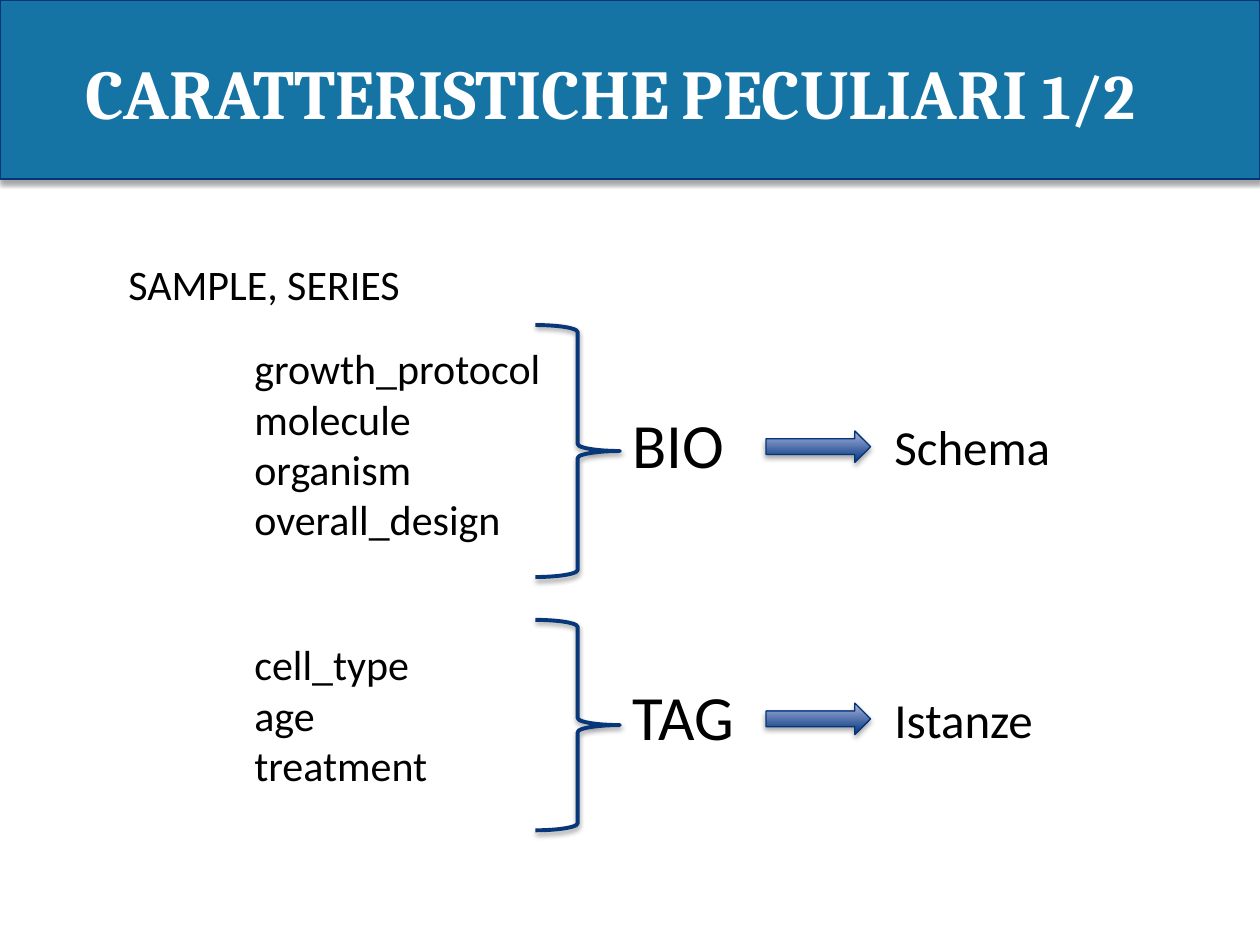
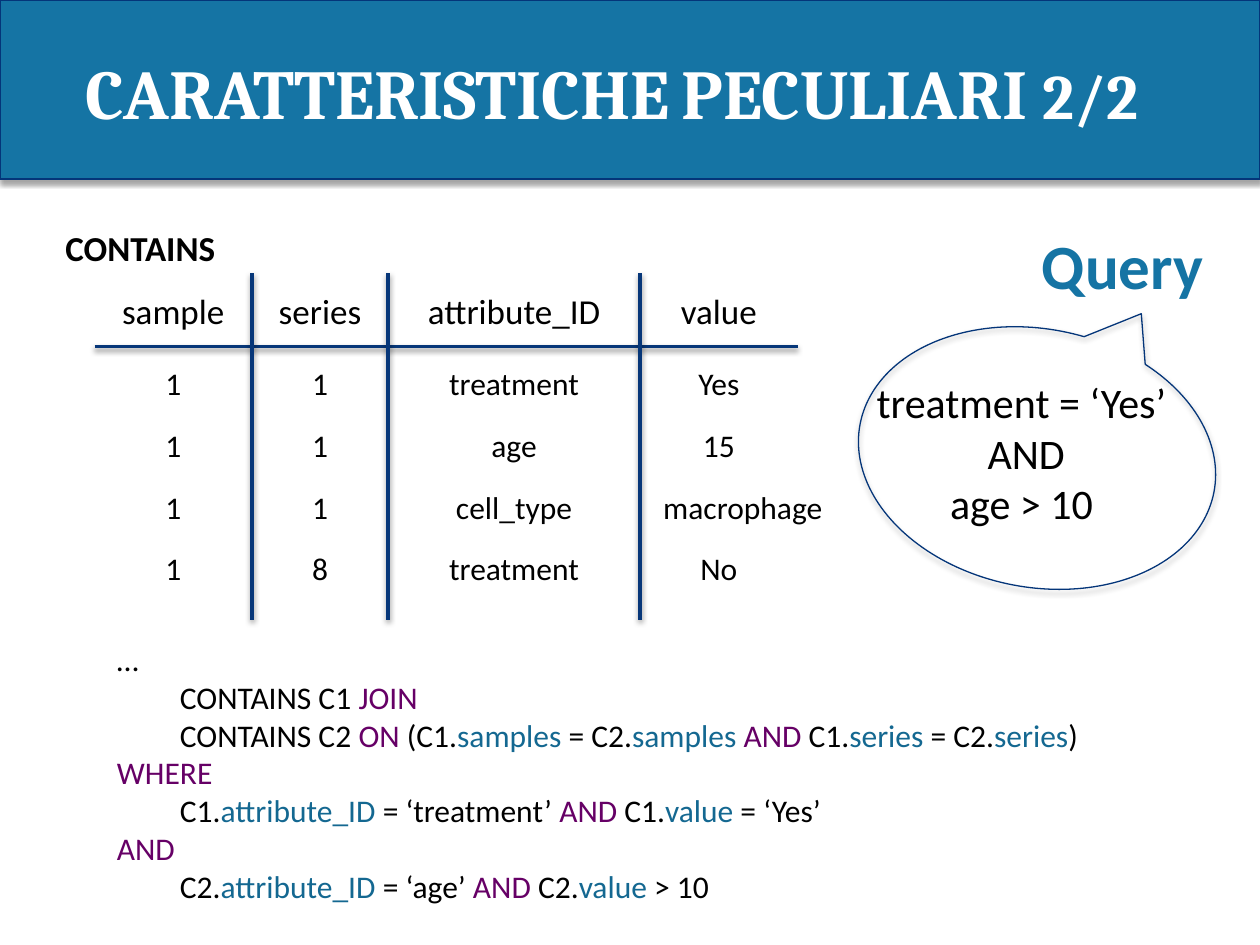
from lxml import etree
from pptx import Presentation
from pptx.dml.color import RGBColor
from pptx.enum import shapes, text
from pptx.oxml import ns
from pptx.util import Inches, Pt

BAND_BLUE = RGBColor(0x15, 0x74, 0xA4)
OUTLINE = RGBColor(0x04, 0x35, 0x79)
RULE = RGBColor(0x07, 0x37, 0x79)
ARROW_DARK = RGBColor(0x00, 0x36, 0x80)
ARROW_LIGHT = RGBColor(0xAB, 0xB3, 0xDC)
KEYWORD = RGBColor(0x66, 0x00, 0x66)
COLUMN = RGBColor(0x14, 0x68, 0x91)
SPACE_GREY = RGBColor(0xD7, 0xD7, 0xD7)
WHITE = RGBColor(0xFF, 0xFF, 0xFF)
BLACK = RGBColor(0, 0, 0)
LEFT, CENTER = text.PP_ALIGN.LEFT, text.PP_ALIGN.CENTER
NO_GRID_STYLE = "{2D5ABB26-0587-4C30-8999-92F81FD0307C}"


def write(frame, paragraphs, size, font="Calibri", color=BLACK, bold=False,
          align=LEFT, indents=None):
    """Each paragraph is a string or a list of (text, size, color) runs."""
    frame.word_wrap = True
    for index, runs in enumerate(paragraphs):
        paragraph = frame.paragraphs[0] if index == 0 else frame.add_paragraph()
        paragraph.alignment = align
        if indents and indents[index]:
            paragraph._p.get_or_add_pPr().set("marL", str(Inches(indents[index])))
        if isinstance(runs, str):
            runs = [(runs, size, color)]
        for content, run_size, run_color in runs:
            run = paragraph.add_run()
            run.text = content
            run.font.name = font
            run.font.size = Pt(run_size)
            run.font.bold = bold
            run.font.color.rgb = run_color


def outline(shape, color, width, opacity, distance):
    """Line plus a soft shadow falling straight down."""
    shape.line.color.rgb = color
    shape.line.width = Pt(width)
    properties = shape._element.spPr
    for old in properties.findall(ns.qn("a:effectLst")):
        properties.remove(old)
    effects = etree.SubElement(properties, ns.qn("a:effectLst"))
    shadow = etree.SubElement(effects, ns.qn("a:outerShdw"), blurRad=str(Pt(3.1)),
                              dist=str(Pt(distance)), dir="5400000", rotWithShape="0")
    black = etree.SubElement(shadow, ns.qn("a:srgbClr"), val="000000")
    etree.SubElement(black, ns.qn("a:alpha"), val=str(opacity * 1000))


presentation = Presentation()
presentation.slide_width = Inches(10)
presentation.slide_height = Inches(7.5)

# Title band on both slides
slides = []
for page in ("1/2", "2/2"):
    slide = presentation.slides.add_slide(presentation.slide_layouts[6])
    slides.append(slide)
    band = slide.shapes.add_shape(shapes.MSO_SHAPE.RECTANGLE, 0, 0, Inches(10), Inches(1.42))
    band.fill.solid()
    band.fill.fore_color.rgb = BAND_BLUE
    outline(band, OUTLINE, 0.75, 35, 1.8)
    title = slide.shapes.add_textbox(Inches(0.58), Inches(-0.08), Inches(9), Inches(1.61))
    title.text_frame.vertical_anchor = text.MSO_ANCHOR.MIDDLE
    write(title.text_frame, [[("CARATTERISTICHE", 40, WHITE), (" ", 32, SPACE_GREY),
                              ("PECULIARI ", 40, WHITE), (page, 36, WHITE)]],
          40, font="Cambria", bold=True)
schema_slide, query_slide = slides

# Slide 1: attribute groups, each with brace, name, arrow and meaning
heading = schema_slide.shapes.add_textbox(Inches(0.92), Inches(2), Inches(4.08), Inches(0.5))
write(heading.text_frame, ["SAMPLE, SERIES"], 24)

groups = [
    (["growth_protocol", "molecule", "organism", "overall_design"],
     2.67, 1.72, 2.58, 2, "BIO", 3.17, "Schema"),
    (["cell_type", "age", "treatment"],
     5.02, 1.31, 4.92, 1.67, "TAG", 5.33, "Istanze"),
]
for attributes, list_top, list_height, brace_top, brace_height, name, name_top, meaning in groups:
    for lines, left, top, width, height, size in (
            (attributes, 1.92, list_top, 4.08, list_height, 24),
            ([name], 4.92, name_top, 4.08, 0.71, 36),
            ([meaning], 7, name_top + 0.09, 1.83, 0.57, 28)):
        box = schema_slide.shapes.add_textbox(
            Inches(left), Inches(top), Inches(width), Inches(height))
        write(box.text_frame, lines, size)
    brace = schema_slide.shapes.add_shape(
        shapes.MSO_SHAPE.RIGHT_BRACE, Inches(4.25), Inches(brace_top),
        Inches(0.67), Inches(brace_height))
    brace.fill.background()
    outline(brace, RULE, 2.25, 38, 1.6)
    arrow = schema_slide.shapes.add_shape(
        shapes.MSO_SHAPE.RIGHT_ARROW, Inches(6.08), Inches(name_top + 0.25),
        Inches(0.83), Inches(0.25))
    arrow.fill.gradient()
    arrow.fill.gradient_angle = 90
    for stop, color, position in zip(arrow.fill.gradient_stops, (ARROW_DARK, ARROW_LIGHT), (0, 1)):
        stop.color.rgb = color
        stop.position = position
    outline(arrow, OUTLINE, 0.75, 35, 1.8)

# Slide 2: CONTAINS table
contains_rows = [
    ("sample", "series", "attribute_ID", "value"),
    ("1", "1", "treatment", "Yes"),
    ("1", "1", "age", "15"),
    ("1", "1", "cell_type", "macrophage"),
    ("1", "8", "treatment", "No"),
]
column_edges = [0.75, 2, 3.08, 5.08, 6.71]
table_frame = query_slide.shapes.add_table(
    5, 4, Inches(0.75), Inches(2.15), Inches(5.96), Inches(2.62))
table = table_frame.table
table.first_row = table.horz_banding = False
table._tbl.tblPr.find(ns.qn("a:tableStyleId")).text = NO_GRID_STYLE
for index, column in enumerate(table.columns):
    column.width = Inches(column_edges[index + 1] - column_edges[index])
for row_index, values in enumerate(contains_rows):
    table.rows[row_index].height = Inches(0.49 if row_index else 0.66)
    for column_index, value in enumerate(values):
        cell = table.cell(row_index, column_index)
        cell.fill.background()
        cell.vertical_anchor = text.MSO_ANCHOR.MIDDLE
        cell.margin_left = cell.margin_right = Inches(0.05)
        # Short values are centred left of the long one
        if column_index == 3 and value != "macrophage":
            cell.margin_right = Inches(0.43)
        write(cell.text_frame, [value], 18 if row_index else 20, align=CENTER)

# Table rules
rules = [(0.75, 2.75, 6.33, 2.75)] + [(x, 2.17, x, 4.92) for x in column_edges[1:4]]
for ends in rules:
    rule = query_slide.shapes.add_connector(
        shapes.MSO_CONNECTOR.STRAIGHT, *[Inches(end) for end in ends])
    outline(rule, RULE, 2, 38, 1.6)

# Table name and query callout
labels = [
    (["CONTAINS"], 0.42, 1.75, 2.42, 0.44, 20, BLACK, True, LEFT),
    (["Query"], 8.17, 1.75, 1.83, 0.71, 36, BAND_BLUE, True, LEFT),
    (["treatment = ‘Yes’ ", "AND", "age > 10 "],
     6.71, 2.94, 2.87, 1.31, 24, BLACK, False, CENTER),
]
for lines, left, top, width, height, size, color, bold, align in labels:
    box = query_slide.shapes.add_textbox(
        Inches(left), Inches(top), Inches(width), Inches(height))
    write(box.text_frame, lines, size, color=color, bold=bold, align=align)
callout = query_slide.shapes.add_shape(
    shapes.MSO_SHAPE.OVAL_CALLOUT, Inches(6.8), Inches(2.61), Inches(2.86), Inches(2.05))
callout.rotation = 190.9
callout.fill.background()
outline(callout, OUTLINE, 0.75, 35, 1.8)

# SQL text: bars separate the coloured words
code_colors = dict.fromkeys(("JOIN", "ON", "AND", "WHERE"), KEYWORD)
code_colors.update(dict.fromkeys(("samples", "series", "attribute_ID", "value"), COLUMN))
code_lines = [
    (0, "…"),
    (0.5, "CONTAINS C1 |JOIN"),
    (0.5, "CONTAINS C2 |ON| (C1.|samples| = C2.|samples| |AND| C1.|series| = C2.|series|)"),
    (0, "WHERE"),
    (0.5, "C1.|attribute_ID| = ‘treatment’ |AND| C1.|value| = ‘Yes’"),
    (0, "AND"),
    (0.5, "C2.|attribute_ID| = ‘age’ |AND| C2.|value| > 10"),
]
code = query_slide.shapes.add_textbox(Inches(0.83), Inches(5.03), Inches(8.42), Inches(2.22))
write(code.text_frame,
      [[(piece, 18, code_colors.get(piece, BLACK)) for piece in line.split("|")]
       for _, line in code_lines],
      18, indents=[indent for indent, _ in code_lines])

presentation.save("out.pptx")
